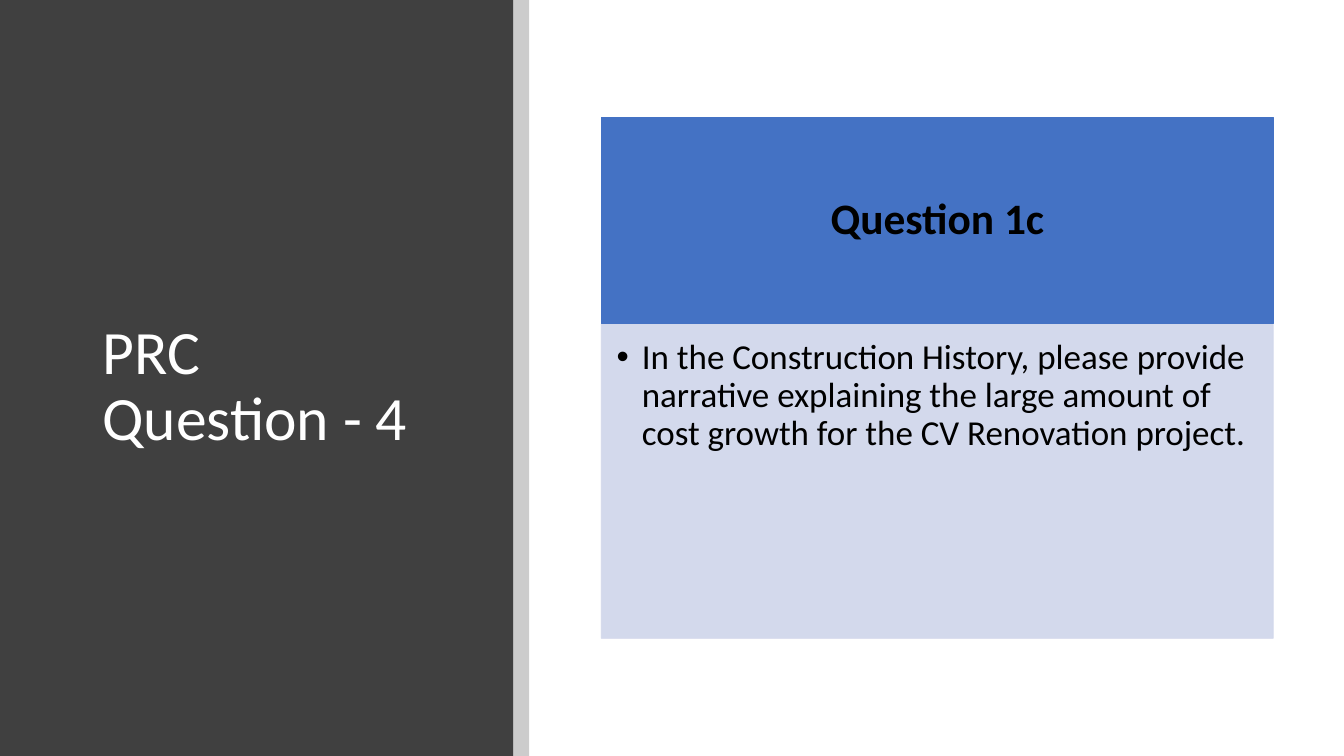
from lxml import etree
from pptx import Presentation
from pptx import util as u
from pptx.dml import color
from pptx.enum import shapes, text
from pptx.oxml import ns

Pt = u.Pt
FONT = "Calibri"
HUES = {
    "panel": "404040",
    "white": "FFFFFF",
    "black": "000000",
    "head": "4472C4",
    "body": "CFD5EA",
}


def tint(fill, hue, alpha=100):
    """Make a fill solid, with its opacity in percent."""
    fill.solid()
    fill.fore_color.rgb = color.RGBColor.from_string(HUES[hue])
    if alpha < 100:
        for node in fill._xPr.iter(ns.qn("a:srgbClr")):
            etree.SubElement(node, ns.qn("a:alpha"), val=str(alpha * 1000))


def place(shape, box):
    shape.left, shape.top, shape.width, shape.height = map(Pt, box)


def block(slide, box, hue, alpha=100):
    shape = slide.shapes.add_shape(shapes.MSO_SHAPE.RECTANGLE, *map(Pt, box))
    shape.shadow.inherit = False
    tint(shape.fill, hue, alpha)
    shape.line.fill.background()
    return shape


def edge(shape, hue, alpha=100):
    shape.line.width = Pt(0.5)
    tint(shape.line.fill, hue, alpha)


def write(shape, lines, size, hue, align, anchor, pads, bold=False):
    """Fill a shape with one paragraph, broken into the given lines."""
    frame = shape.text_frame
    frame.word_wrap = True
    frame.auto_size = text.MSO_AUTO_SIZE.NONE
    frame.vertical_anchor = anchor
    (frame.margin_left, frame.margin_top,
     frame.margin_right, frame.margin_bottom) = map(Pt, pads)
    para = frame.paragraphs[0]
    para.alignment = align
    para.line_spacing = 0.9
    para.space_before = Pt(0)
    for i, line in enumerate(lines):
        if i:
            para.add_line_break()
        run = para.add_run()
        run.text = line
        font = run.font
        font.name, font.size, font.bold = FONT, Pt(size), bold
        font.color.rgb = color.RGBColor.from_string(HUES[hue])
    return para


def side(slide, box, lines):
    """Dark panel with the slide title and a pale strip on its right."""
    x, y, w, h = box
    title = slide.shapes.title
    panel = block(slide, box, "panel")
    title.element.addprevious(panel.element)
    place(title, (x + 66, y + 64, w - 103.5, h - 114.5))
    write(title, lines, 44, "white", text.PP_ALIGN.LEFT,
          text.MSO_ANCHOR.MIDDLE, (7.2, 3.6, 7.2, 3.6))
    block(slide, (x + w, y, 11.5, h), "black", 20)


def card(slide, box, head, item):
    """Coloured heading above a tinted area with one bullet."""
    x, y, w, h = box
    top = 147.3
    bar = block(slide, (x, y, w, top), "head")
    edge(bar, "head")
    write(bar, [head], 31, "black", text.PP_ALIGN.CENTER,
          text.MSO_ANCHOR.MIDDLE, (17.3, 10, 17.3, 10), True)

    body = slide.placeholders[1]
    place(body, (x, y + top, w, h - top))
    tint(body.fill, "body", 90)
    edge(body, "body", 90)
    para = write(body, [item], 25, "black", text.PP_ALIGN.LEFT,
                 text.MSO_ANCHOR.TOP, (11, 11, 13.7, 16))
    props = para._p.get_or_add_pPr()
    props.set("marL", str(Pt(18)))
    props.set("indent", str(-Pt(18)))
    etree.SubElement(props, ns.qn("a:buFont"), typeface="Arial")
    etree.SubElement(props, ns.qn("a:buChar"), char="•")


def main():
    deck = Presentation()
    deck.slide_width, deck.slide_height = Pt(960), Pt(540)
    slide = deck.slides.add_slide(deck.slide_layouts[1])
    tint(slide.background.fill, "white")
    side(slide, (0, 0, 366.5, 540), ["PRC", "Question - 4"])
    card(slide, (429.5, 84, 480, 372), "Question 1c",
         "In the Construction History, please provide narrative explaining "
         "the large amount of cost growth for the CV Renovation project.")
    deck.save("out.pptx")


if __name__ == "__main__":
    main()
